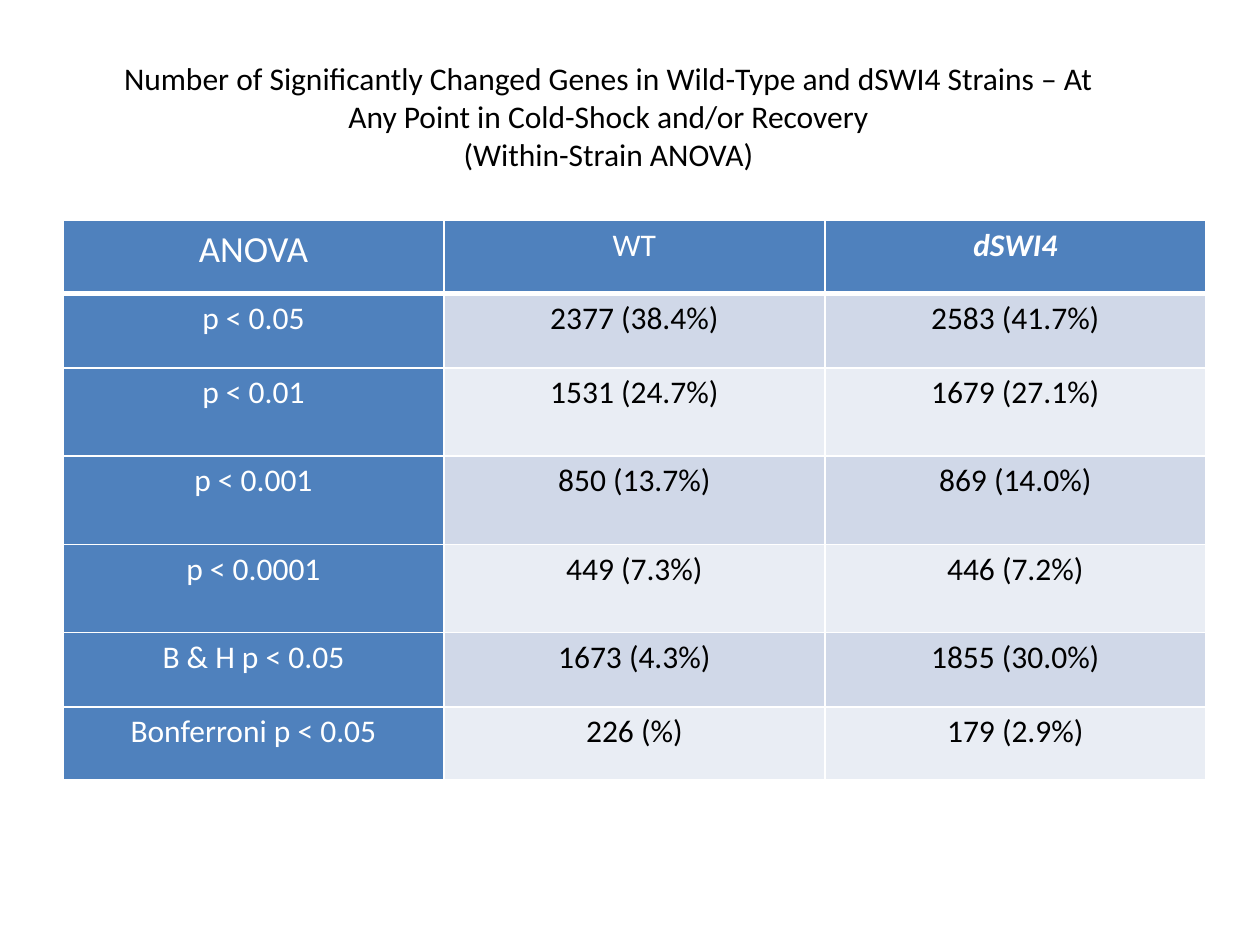
"""Build a slide with a table of ANOVA gene counts for two strains."""
from lxml import etree
from pptx import Presentation
from pptx.dml.color import RGBColor
from pptx.enum import text
from pptx.oxml import ns
from pptx.util import Inches, Pt


def style(p, size, color):
    p.alignment = text.PP_ALIGN.CENTER
    for r in p.runs:
        r.font.name = "Calibri"
        r.font.size = Pt(size)
        r.font.color.rgb = RGBColor.from_string(color)


def border(cell, side, width):
    ln = etree.SubElement(cell._tc.get_or_add_tcPr(), ns.qn(f"a:ln{side}"), w=str(Pt(width)))
    fill = etree.SubElement(ln, ns.qn("a:solidFill"))
    etree.SubElement(fill, ns.qn("a:srgbClr"), val="FFFFFF")


BLUE, WHITE, BLACK = "4F81BD", "FFFFFF", "000000"
BANDS = ["E9EDF4", "D0D8E8"]
ROWS = [
    ("ANOVA", "WT", "dSWI4"),
    ("p < 0.05", "2377 (38.4%)", "2583 (41.7%)"),
    ("p < 0.01", "1531 (24.7%)", "1679 (27.1%)"),
    ("p < 0.001", "850 (13.7%)", "869 (14.0%)"),
    ("p < 0.0001", "449 (7.3%)", "446 (7.2%)"),
    ("B & H p < 0.05", "1673 (4.3%)", "1855 (30.0%)"),
    ("Bonferroni p < 0.05", "226 (%)", "179 (2.9%)"),
]
HEIGHTS = [0.58, 0.59, 0.7, 0.7, 0.7, 0.59, 0.58]

prs = Presentation()
prs.slide_width, prs.slide_height = Inches(10), Inches(7.5)
s = prs.slides.add_slide(prs.slide_layouts[6])

table = s.shapes.add_table(
    len(ROWS), 3, Inches(0.5), Inches(1.75), Inches(9.07), Inches(sum(HEIGHTS))
).table
for row, height in zip(table.rows, HEIGHTS):
    row.height = Inches(height)

for i, values in enumerate(ROWS):
    for j, value in enumerate(values):
        cell = table.cell(i, j)
        cell.margin_left = cell.margin_right = Inches(0.07)
        cell.margin_top = cell.margin_bottom = 0
        for side in "LRTB":
            border(cell, side, 3 if i == 0 and side == "B" else 1)
        heading = i == 0 or j == 0
        cell.fill.solid()
        cell.fill.fore_color.rgb = RGBColor.from_string(BLUE if heading else BANDS[i % 2])
        p = cell.text_frame.paragraphs[0]
        p.text = value
        p.line_spacing = 1.15
        style(p, 21 if i == j == 0 else 18, WHITE if heading else BLACK)
        strain = value == "dSWI4"
        p.runs[0].font.bold = p.runs[0].font.italic = strain

sp = s.shapes.add_textbox(Inches(0.83), Inches(0.42), Inches(8), Inches(1.01))
tf = sp.text_frame
tf.word_wrap = True
tf.auto_size = text.MSO_AUTO_SIZE.SHAPE_TO_FIT_TEXT
tf.text = (
    "Number of Significantly Changed Genes in Wild-Type and dSWI4 Strains – "
    "At Any Point in Cold-Shock and/or Recovery\n(Within-Strain ANOVA)"
)
for p in tf.paragraphs:
    style(p, 18, BLACK)

prs.save("out.pptx")
